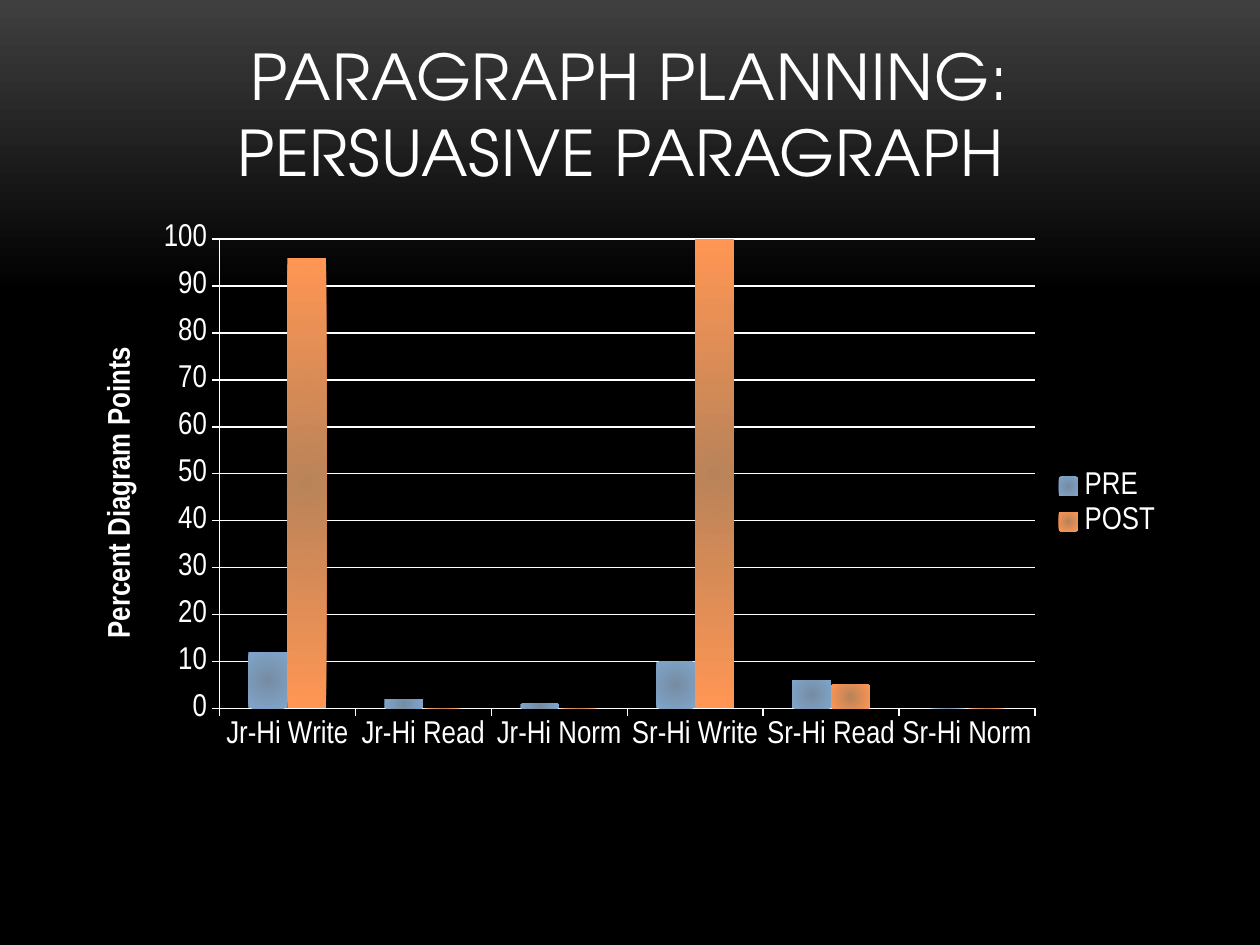
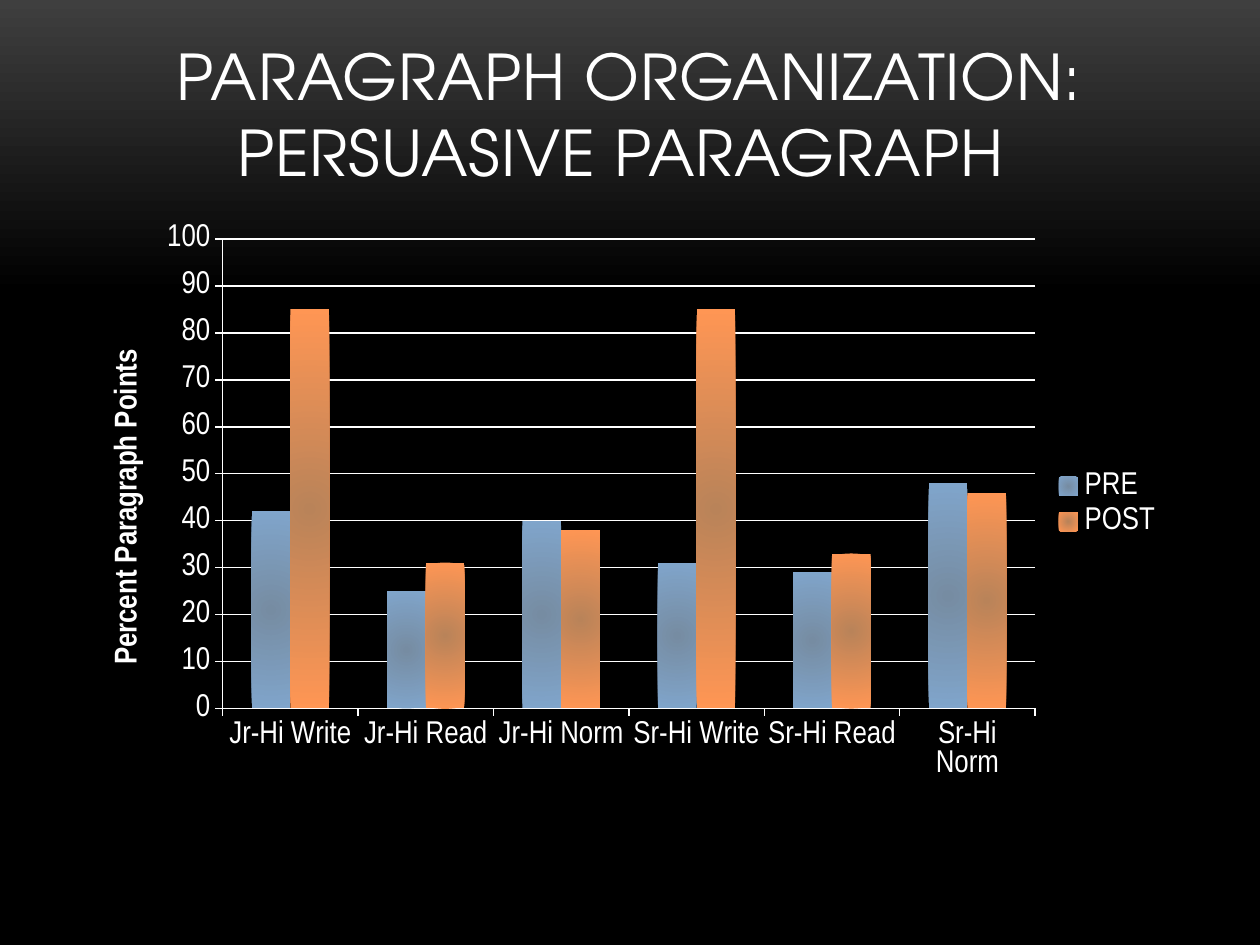
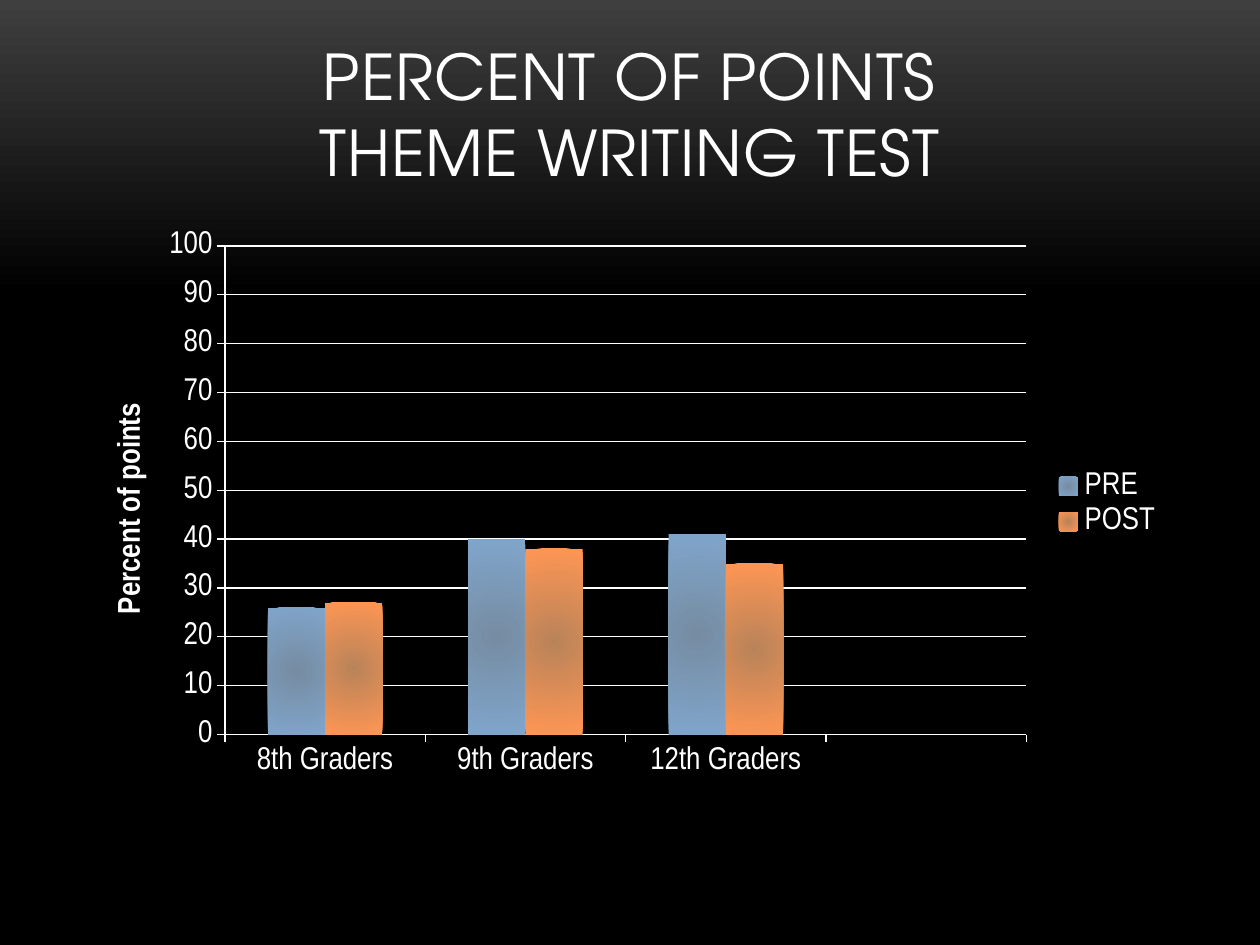
from lxml import etree
from pptx import Presentation
from pptx.chart.data import CategoryChartData
from pptx.dml.color import RGBColor
from pptx.enum.chart import XL_CHART_TYPE as ChartType, XL_LEGEND_POSITION as LegendPosition
from pptx.enum.chart import XL_TICK_MARK as TickMark
from pptx.enum.text import MSO_ANCHOR as Anchor, PP_ALIGN as Align
from pptx.oxml import parse_xml
from pptx.oxml.ns import nsdecls, qn
from pptx.util import Inches, Pt

WIDTH, HEIGHT = Inches(10), Inches(7.5)
BLANK_LAYOUT = 6
COLORS = {"text": "FFFFFF", "glow": "3F3F3F", "night": "000000"}
# Centre and edge of each series' radial gradient
BAR_COLORS = {"PRE": ("768CA2", "80A5CB"), "POST": ("B98359", "FF9654")}

# Left, top, width, height as shares of the slide
MARGIN, CONTENT = 1 / 15, 13 / 15
TITLE_BOX = (MARGIN, 0.04, CONTENT, 1 / 6)
CHART_BOX = (MARGIN, 7 / 30, CONTENT, 0.6)

TITLE_FONT = {"name": "TeX Gyre Adventor", "size": Pt(36)}
CHART_FONT = {"name": "Arial Narrow", "size": Pt(18), "bold": False}
AXIS_TITLE_FONT = CHART_FONT | {"bold": True}

SCHOOL_GROUPS = [f"{school} {group}" for school in ("Jr-Hi", "Sr-Hi")
                 for group in ("Write", "Read", "Norm")]
# "plot" and "axis_at" are percentages of the chart's frame
SLIDES = [
    {"title": "PARAGRAPH PLANNING:\nPERSUASIVE PARAGRAPH ",
     "axis_title": "Percent Diagram Points", "axis_at": (1.3, 21.3),
     "plot": (12.4, 3.3, 74.7, 82.8), "groups": SCHOOL_GROUPS,
     "scores": {"PRE": (12, 2, 1, 10, 6, 0), "POST": (96, 0, 0, 100, 5, 0)}},
    {"title": "PARAGRAPH ORGANIZATION:\nPERSUASIVE PARAGRAPH ",
     "axis_title": "Percent Paragraph Points", "axis_at": (1.9, 21.7),
     "plot": (12.7, 3.3, 74.4, 82.8), "groups": SCHOOL_GROUPS,
     "scores": {"PRE": (42, 25, 40, 31, 29, 48), "POST": (85, 31, 38, 85, 33, 46)}},
    {"title": "PERCENT OF POINTS\nTHEME WRITING TEST",
     "axis_title": "Percent of points", "axis_at": (2.2, 31.2),
     "plot": (12.9, 4.5, 73.4, 86.2),
     "groups": ["8th Graders", "9th Graders", "12th Graders", ""],
     "scores": {"PRE": (26, 40, 41, None), "POST": (27, 38, 35, None)}},
]


def rgb(name):
    return RGBColor.from_string(COLORS[name])


def on_slide(box):
    """Turn shares of the slide into lengths."""
    return [int(share * side) for share, side in zip(box, (WIDTH, HEIGHT) * 2)]


def apply_format(target, values):
    for name, value in values.items():
        setattr(target, name, value)


def style_font(font, values):
    apply_format(font, values)
    font.color.rgb = rgb("text")


def style_line(line):
    line.color.rgb = rgb("text")
    line.width = Pt(0.75)


def fill_gradient(fill, stops):
    """Fill with two (position, hex colour) stops."""
    fill.gradient()
    for stop, (position, color) in zip(fill.gradient_stops, stops):
        stop.position = position
        stop.color.rgb = RGBColor.from_string(color)


def paint_background(master):
    fill = master.background.fill
    fill_gradient(fill, [(0, COLORS["glow"]), (0.31, COLORS["night"])])
    fill.gradient_angle = 270


def add_title(slide, text, box):
    frame = slide.shapes.add_textbox(*on_slide(box)).text_frame
    apply_format(frame, {"word_wrap": True, "vertical_anchor": Anchor.BOTTOM})
    heading = frame.paragraphs[0]
    heading.text = text.replace("\n", "\v")
    heading.alignment = Align.CENTER
    for line in heading.runs:
        style_font(line.font, TITLE_FONT)
        line.font._element.set("spc", "50")


def place_manually(part, percents, inner=False):
    """Fix a chart part's place within the chart's frame."""
    layout = part.find(qn("c:layout"))
    if layout is None:
        layout = parse_xml(f"<c:layout {nsdecls('c')}/>")
        part.insert(0, layout)
    manual = etree.SubElement(layout, qn("c:manualLayout"))
    settings = {"layoutTarget": "inner"} if inner else {}
    settings |= {"xMode": "edge", "yMode": "edge"}
    settings |= {key: f"{percent / 100:.3f}" for key, percent in zip("xywh", percents)}
    for tag, value in settings.items():
        etree.SubElement(manual, qn(f"c:{tag}")).set("val", value)


def color_bars(chart):
    for series in chart.plots[0].series:
        series.invert_if_negative = False
        center, edge = BAR_COLORS[series.name]
        fill_gradient(series.format.fill, [(0, center), (1, edge)])
    for gradient in chart.element.xpath("//c:ser/c:spPr/a:gradFill"):
        gradient.remove(gradient.find(qn("a:lin")))
        gradient.append(parse_xml(
            f'<a:path {nsdecls("a")} path="circle">'
            '<a:fillToRect l="50000" t="50000" r="50000" b="50000"/></a:path>'))


def style_axes(chart, axis_title):
    for axis in (chart.category_axis, chart.value_axis):
        axis.major_tick_mark = TickMark.OUTSIDE
        axis.minor_tick_mark = TickMark.NONE
        style_line(axis.format.line)
    percent_axis = chart.value_axis
    apply_format(percent_axis, {"minimum_scale": 0, "maximum_scale": 100,
                                "major_unit": 10, "has_major_gridlines": True})
    style_line(percent_axis.major_gridlines.format.line)
    caption = percent_axis.axis_title.text_frame
    caption.text = axis_title
    style_font(caption.paragraphs[0].runs[0].font, AXIS_TITLE_FONT)


def add_score_chart(slide, content, box):
    data = CategoryChartData()
    data.categories = content["groups"]
    for test, scores in content["scores"].items():
        data.add_series(test, scores)
    chart = slide.shapes.add_chart(ChartType.COLUMN_CLUSTERED, *on_slide(box), data).chart
    apply_format(chart, {"has_title": False, "has_legend": True})
    apply_format(chart.legend, {"position": LegendPosition.RIGHT, "include_in_layout": False})
    apply_format(chart.plots[0], {"gap_width": 150, "overlap": 0, "vary_by_categories": False})
    style_font(chart.font, CHART_FONT)
    style_axes(chart, content["axis_title"])
    color_bars(chart)
    place_manually(chart.element.xpath("//c:plotArea")[0], content["plot"], inner=True)
    place_manually(chart.element.xpath("//c:valAx/c:title")[0], content["axis_at"])


def main():
    deck = Presentation()
    apply_format(deck, {"slide_width": WIDTH, "slide_height": HEIGHT})
    paint_background(deck.slide_master)
    for content in SLIDES:
        slide = deck.slides.add_slide(deck.slide_layouts[BLANK_LAYOUT])
        add_title(slide, content["title"], TITLE_BOX)
        add_score_chart(slide, content, CHART_BOX)
    deck.save("out.pptx")


if __name__ == "__main__":
    main()
